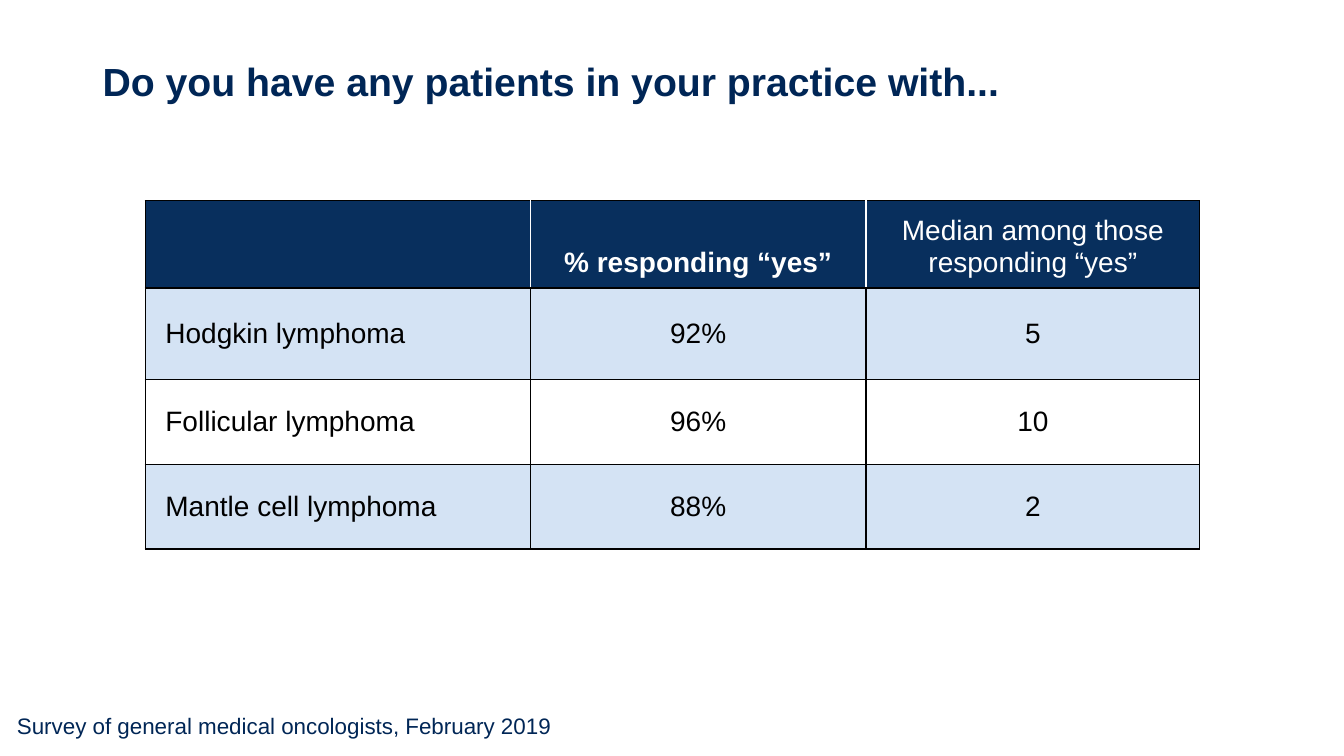
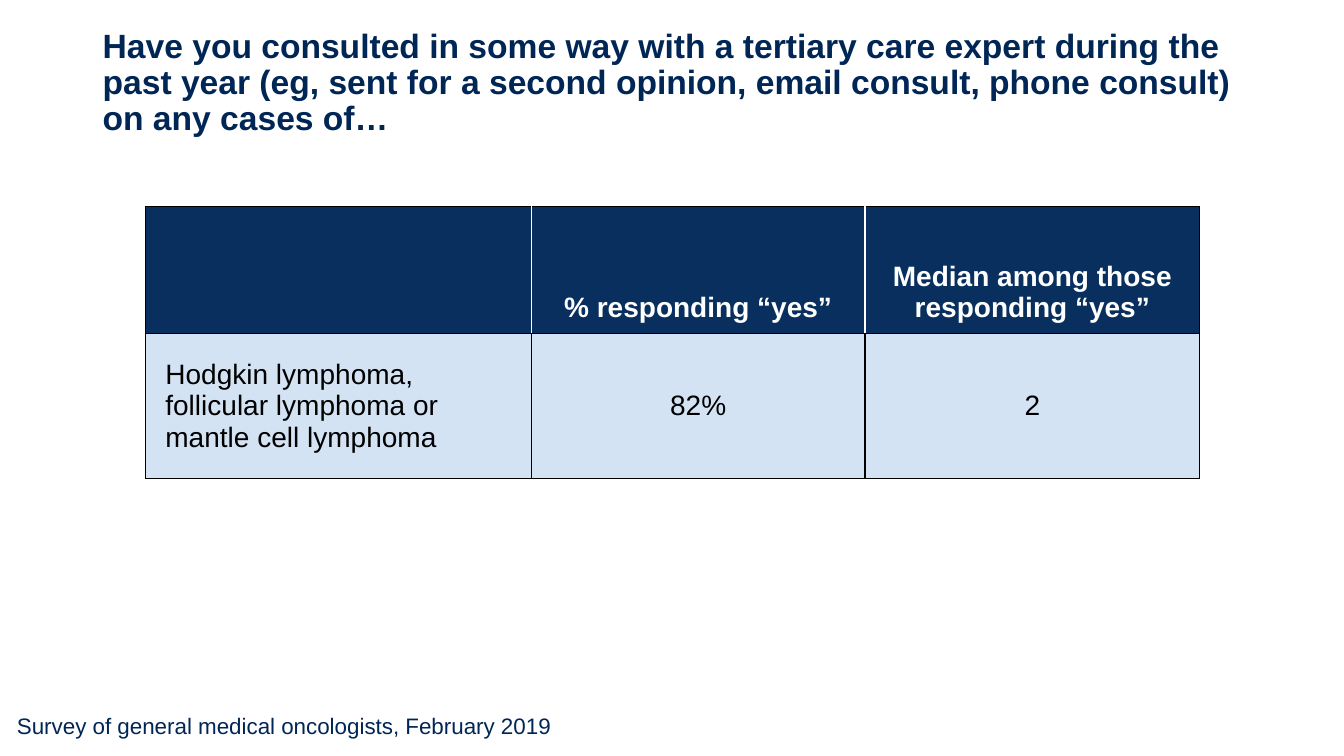
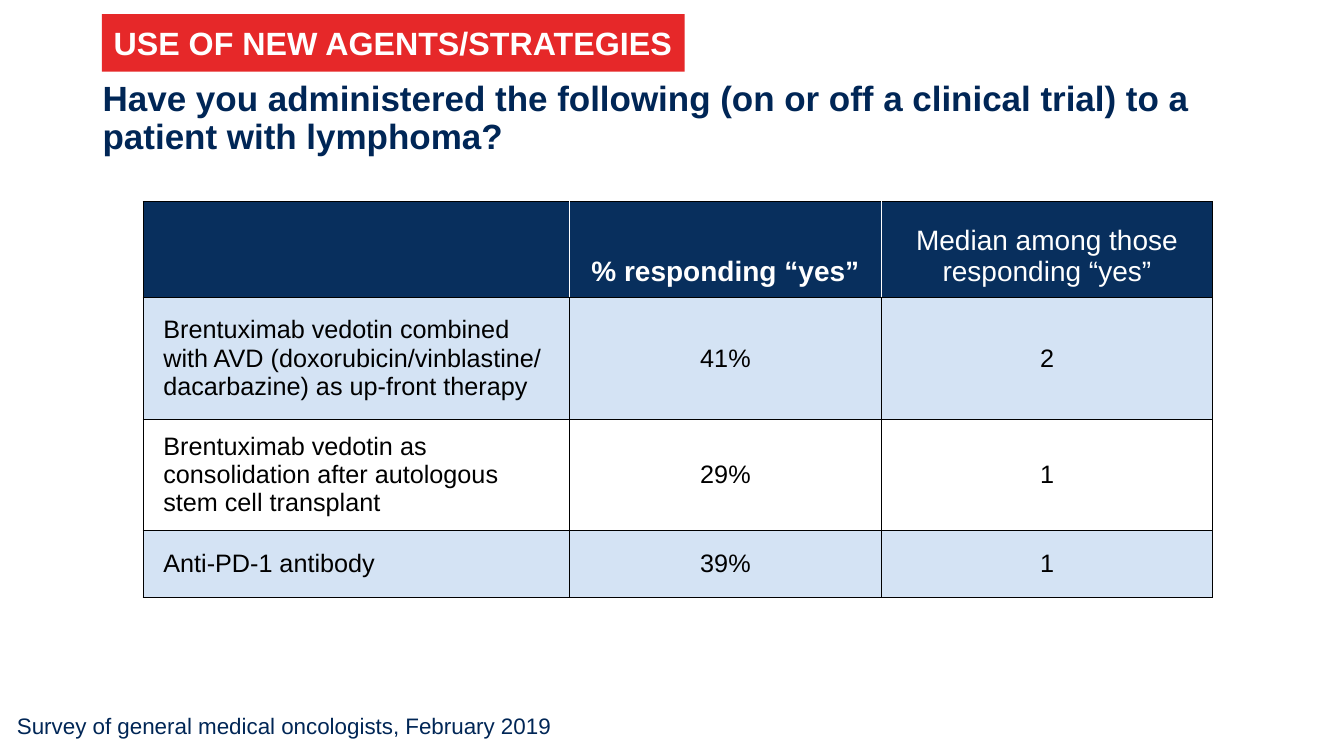
"""Build three survey slides on lymphoma care, each with a results table."""

from dataclasses import dataclass

from lxml.etree import SubElement
from pptx import Presentation
from pptx.dml.color import RGBColor
from pptx.enum.shapes import MSO_SHAPE
from pptx.enum.text import MSO_ANCHOR, MSO_AUTO_SIZE, PP_ALIGN
from pptx.oxml.ns import qn
from pptx.slide import Slide
from pptx.table import _Cell
from pptx.text.text import TextFrame
from pptx.util import Inches, Pt


@dataclass(frozen=True)
class Theme:
    font: str = "Arial"
    navy: str = "002656"
    header: str = "082F5D"
    stripe: str = "D4E3F4"
    red: str = "E62829"
    white: str = "FFFFFF"
    black: str = "000000"
    footer_size: int = 16
    header_size: int = 20
    tag_size: int = 23
    border: int = 1


@dataclass(frozen=True)
class Box:
    left: float
    top: float
    width: float
    height: float

    def emu(self) -> tuple[int, ...]:
        return tuple(Inches(n) for n in (self.left, self.top, self.width, self.height))


@dataclass(frozen=True)
class Answers:
    left: float
    top: float
    columns: tuple[float, ...]
    heights: tuple[float, ...]
    rows: tuple[tuple[str, str, str], ...]
    median_heading: str = "Median among those\nresponding “yes”"
    median_bold: bool = False
    size: int = 20


@dataclass(frozen=True)
class Question:
    title: str
    title_size: int
    answers: Answers
    title_box: Box = Box(0.92, 0, 11.5, 1.66)
    tag: str = ""


THEME = Theme()
FOOTER = "Survey of general medical oncologists, February 2019"
FOOTER_BOX = Box(0.07, 7.02, 5.7, 0.37)
TAG_BOX = Box(1.01, 0.14, 5.78, 0.57)

QUESTIONS = (
    Question(
        "Do you have any patients in your practice with...",
        28,
        Answers(
            1.44, 1.99, (3.82, 3.33, 3.31), (0.84, 0.91, 0.84, 0.84),
            (
                ("Hodgkin lymphoma", "92%", "5"),
                ("Follicular lymphoma", "96%", "10"),
                ("Mantle cell lymphoma", "88%", "2"),
            ),
        ),
    ),
    Question(
        "Have you consulted in some way with a tertiary care expert during the "
        "past year (eg, sent for a second opinion, email consult, phone consult) "
        "on any cases of…",
        24,
        Answers(
            1.44, 2.05, (3.83, 3.31, 3.32), (1.26, 1.44),
            (("Hodgkin lymphoma, follicular lymphoma or mantle cell lymphoma", "82%", "2"),),
            median_heading="Median among those responding “yes”",
            median_bold=True,
        ),
    ),
    Question(
        "Have you administered the following (on or off a clinical trial) to a "
        "patient with lymphoma?",
        25,
        Answers(
            1.42, 2, (4.23, 3.09, 3.29), (0.95, 1.21, 0.95, 0.67),
            (
                (
                    "Brentuximab vedotin combined with AVD (doxorubicin/vinblastine/\v"
                    "dacarbazine) as up-front therapy",
                    "41%",
                    "2",
                ),
                (
                    "Brentuximab vedotin as consolidation after autologous stem cell transplant",
                    "29%",
                    "1",
                ),
                ("Anti-PD-1 antibody", "39%", "1"),
            ),
            size=18,
        ),
        title_box=Box(0.92, 0.71, 11.5, 0.95),
        tag="USE OF NEW AGENTS/STRATEGIES",
    ),
)


def write(
    frame: TextFrame,
    text: str,
    size: int,
    color: str,
    bold: bool = False,
    align: PP_ALIGN = PP_ALIGN.LEFT,
    spacing: float = 1.0,
) -> None:
    frame.text = text
    frame.word_wrap = True
    for paragraph in frame.paragraphs:
        paragraph.alignment = align
        paragraph.line_spacing = spacing
        for run in paragraph.runs:
            run.font.name = THEME.font
            run.font.size = Pt(size)
            run.font.bold = bold
            run.font.color.rgb = RGBColor.from_string(color)


def set_borders(cell: _Cell, left: str, right: str) -> None:
    properties = cell._tc.get_or_add_tcPr()
    edges = {"L": left, "R": right, "T": THEME.black, "B": THEME.black}
    for side, color in edges.items():
        line = SubElement(properties, qn(f"a:ln{side}"), w=str(Pt(THEME.border)))
        fill = SubElement(line, qn("a:solidFill"))
        SubElement(fill, qn("a:srgbClr"), val=color)


def style_cell(cell: _Cell, fill: str, anchor: MSO_ANCHOR) -> None:
    cell.fill.solid()
    cell.fill.fore_color.rgb = RGBColor.from_string(fill)
    cell.vertical_anchor = anchor
    cell.margin_left = cell.margin_right = Inches(0.2)
    cell.margin_top = cell.margin_bottom = Inches(0.1)


def add_answers(slide: Slide, answers: Answers) -> None:
    frame = Box(answers.left, answers.top, sum(answers.columns), sum(answers.heights))
    table = slide.shapes.add_table(
        len(answers.heights), len(answers.columns), *frame.emu()
    ).table
    table.first_row = table.horz_banding = False
    for column, width in zip(table.columns, answers.columns):
        column.width = Inches(width)
    for row, height in zip(table.rows, answers.heights):
        row.height = Inches(height)

    last = len(answers.columns) - 1
    headings = ("", "% responding “yes”", answers.median_heading)
    for index, heading in enumerate(headings):
        cell = table.cell(0, index)
        set_borders(
            cell,
            THEME.white if index > 0 else THEME.black,
            THEME.white if index < last else THEME.black,
        )
        style_cell(cell, THEME.header, MSO_ANCHOR.BOTTOM)
        bold = answers.median_bold if index == last else True
        write(cell.text_frame, heading, THEME.header_size, THEME.white, bold, PP_ALIGN.CENTER)

    for number, values in enumerate(answers.rows, start=1):
        fill = THEME.stripe if number % 2 else THEME.white
        for index, value in enumerate(values):
            cell = table.cell(number, index)
            set_borders(cell, THEME.black, THEME.black)
            style_cell(cell, fill, MSO_ANCHOR.MIDDLE)
            align = PP_ALIGN.CENTER if index else PP_ALIGN.LEFT
            write(cell.text_frame, value, answers.size, THEME.black, align=align)


def add_footer(slide: Slide) -> None:
    frame = slide.shapes.add_textbox(*FOOTER_BOX.emu()).text_frame
    write(frame, FOOTER, THEME.footer_size, THEME.navy)
    frame.auto_size = MSO_AUTO_SIZE.SHAPE_TO_FIT_TEXT


def add_title(slide: Slide, question: Question) -> None:
    frame = slide.shapes.add_textbox(*question.title_box.emu()).text_frame
    frame.vertical_anchor = MSO_ANCHOR.MIDDLE
    write(frame, question.title, question.title_size, THEME.navy, bold=True, spacing=0.9)


def add_tag(slide: Slide, text: str) -> None:
    tag = slide.shapes.add_shape(MSO_SHAPE.RECTANGLE, *TAG_BOX.emu())
    tag.shadow.inherit = False
    tag.fill.solid()
    tag.fill.fore_color.rgb = RGBColor.from_string(THEME.red)
    tag.line.fill.background()
    tag.text_frame.vertical_anchor = MSO_ANCHOR.MIDDLE
    write(tag.text_frame, text, THEME.tag_size, THEME.white, True, PP_ALIGN.CENTER)


def main() -> None:
    deck = Presentation()
    deck.slide_width = Inches(13.33)
    deck.slide_height = Inches(7.5)
    blank = deck.slide_layouts[6]
    for question in QUESTIONS:
        slide = deck.slides.add_slide(blank)
        add_footer(slide)
        add_title(slide, question)
        add_answers(slide, question.answers)
        if question.tag:
            add_tag(slide, question.tag)
    deck.save("out.pptx")


if __name__ == "__main__":
    main()
